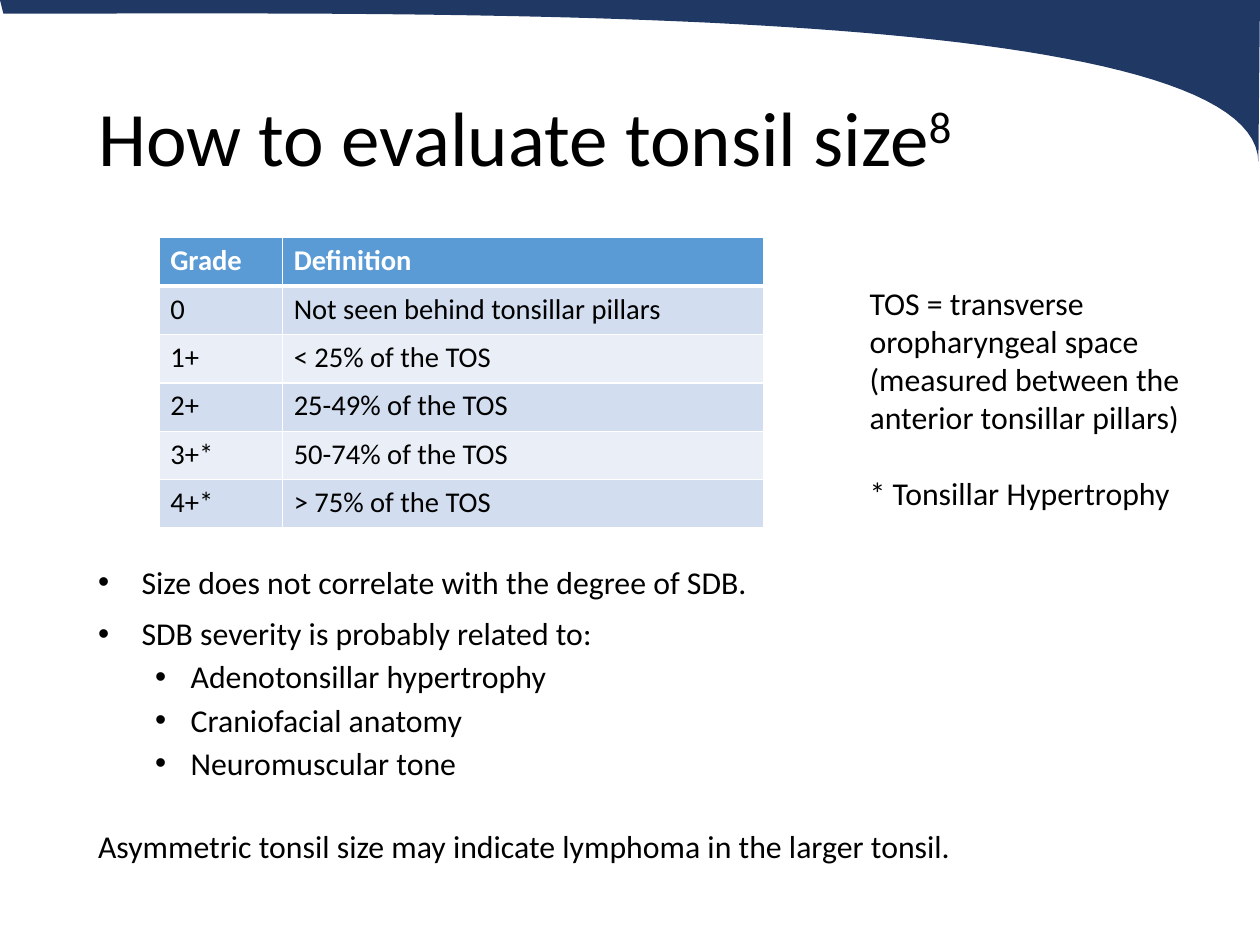
from lxml.etree import SubElement
from pptx import Presentation
from pptx.dml.color import RGBColor
from pptx.enum.text import MSO_ANCHOR, MSO_AUTO_SIZE, PP_ALIGN
from pptx.oxml.ns import qn
from pptx.util import Cm, Inches, Pt

TITLE = ("How to evaluate tonsil size", "8")
GRADES = [
    ("Grade", "Definition"),
    ("0", "Not seen behind tonsillar pillars"),
    ("1+", "< 25% of the TOS"),
    ("2+", "25-49% of the TOS"),
    ("3+*", "50-74% of the TOS"),
    ("4+*", "> 75% of the TOS"),
]
KEY = [
    ("TOS = transverse oropharyngeal space", 0),
    ("(measured between the anterior tonsillar pillars)", 0),
    ("* Tonsillar Hypertrophy", 24),
]
POINTS = [
    (0, "Size does not correlate with the degree of SDB."),
    (0, "SDB severity is probably related to:"),
    (1, "Adenotonsillar hypertrophy"),
    (1, "Craniofacial anatomy"),
    (1, "Neuromuscular tone"),
]
WARNING = "Asymmetric tonsil size may indicate lymphoma in the larger tonsil."

THEME = {
    "font": "Calibri", "title": 48.5, "body": 20, "cell": 18,
    "ink": "000000", "white": "FFFFFF", "navy": "203864",
    "head": "5B9BD5", "bands": ("D2DEEF", "EAEFF7"),
}
LEVELS = [
    {"left": 0.38, "hang": -0.38, "gap": 11},
    {"left": 0.81, "hang": -0.31, "gap": 5.5},
]
WIDE, HIGH = Cm(28), Cm(21)
LEFT = 0.76
CURVE = [(11.01, 1.42), (11, 0), (3.7, 0.12), (0.03, 0.12)]
STEPS = 60


def apply(obj, form):
    for name, value in form.items():
        setattr(obj, name, value)


def style(font, size, ink="ink", bold=False):
    apply(font, {"name": THEME["font"], "size": Pt(size), "bold": bold})
    font.color.rgb = RGBColor.from_string(THEME[ink])


def paint(fill, color):
    fill.solid()
    fill.fore_color.rgb = RGBColor.from_string(color)


def bezier(t):
    parts = ((1 - t) ** 3, 3 * t * (1 - t) ** 2, 3 * t * t * (1 - t), t ** 3)
    return tuple(Inches(sum(w * p[axis] for w, p in zip(parts, CURVE)))
                 for axis in (0, 1))


def add_swoosh(slide):
    pen = slide.shapes.build_freeform(0, 0)
    pen.add_line_segments([(WIDE, 0)] + [bezier(i / STEPS) for i in range(STEPS + 1)])
    shape = pen.convert_to_shape()
    shape.shadow.inherit = False
    paint(shape.fill, THEME["navy"])
    shape.line.fill.background()
    slide.shapes._spTree.insert(2, shape._element)


def add_title(slide):
    title = slide.shapes.title
    apply(title, {"left": Inches(LEFT), "top": Inches(0.44),
                  "width": Inches(9.51), "height": Inches(1.6)})
    apply(title.text_frame, {"auto_size": MSO_AUTO_SIZE.NONE, "word_wrap": True,
                             "vertical_anchor": MSO_ANCHOR.MIDDLE})
    para = title.text_frame.paragraphs[0]
    apply(para, {"alignment": PP_ALIGN.LEFT, "line_spacing": 0.9})
    for text in TITLE:
        run = para.add_run()
        run.text = text
        style(run.font, THEME["title"])
    run._r.get_or_add_rPr().set("baseline", "30000")


def add_box(slide, place, lines):
    frame = slide.shapes.add_textbox(*map(Inches, place)).text_frame
    frame.word_wrap = True
    paras = [frame.paragraphs[0]] + [frame.add_paragraph() for _ in lines[1:]]
    for i, (para, (text, gap)) in enumerate(zip(paras, lines)):
        para.text = text
        if i and gap:
            para.space_before = Pt(gap)
        style(para.runs[0].font, THEME["body"])
    return paras


def add_points(slide):
    lines = [(text, LEVELS[level]["gap"]) for level, text in POINTS]
    paras = add_box(slide, (LEFT, 4.91, 9.51, 2.2), lines)
    for para, (level, text) in zip(paras, POINTS):
        apply(para, {"level": level, "line_spacing": 0.9})
        prop = para._p.get_or_add_pPr()
        prop.set("marL", str(Inches(LEVELS[level]["left"])))
        prop.set("indent", str(Inches(LEVELS[level]["hang"])))
        SubElement(prop, qn("a:buFont"), typeface="Arial")
        SubElement(prop, qn("a:buChar"), char="•")


def edge(cell, side, width):
    line = SubElement(cell._tc.get_or_add_tcPr(), qn("a:ln" + side), w=str(Pt(width)))
    SubElement(SubElement(line, qn("a:solidFill")), qn("a:srgbClr"), val=THEME["white"])


def add_grades(slide):
    place = map(Inches, (1.39, 2.08, 5.29, 2.54))
    table = slide.shapes.add_table(len(GRADES), 2, *place).table
    for col, width in zip(table.columns, (1.08, 4.21)):
        col.width = Inches(width)
    for r, row in enumerate(GRADES):
        head = r == 0
        color = THEME["head"] if head else THEME["bands"][(r - 1) % 2]
        for c, text in enumerate(row):
            cell = table.cell(r, c)
            cell.text = text
            style(cell.text_frame.paragraphs[0].runs[0].font, THEME["cell"],
                  "white" if head else "ink", head)
            for side in "LRTB":
                thick = (head and side == "B") or (r == 1 and side == "T")
                edge(cell, side, 3 if thick else 1)
            paint(cell.fill, color)


def main():
    deck = Presentation()
    deck.slide_width = WIDE
    deck.slide_height = HIGH
    slide = deck.slides.add_slide(deck.slide_layouts[5])
    add_swoosh(slide)
    add_title(slide)
    add_points(slide)
    add_box(slide, (LEFT, 7.18, 8.82, 0.44), [(WARNING, 0)])
    add_box(slide, (7.51, 2.43, 3.26, 2.12), KEY)
    add_grades(slide)
    deck.save("out.pptx")


if __name__ == "__main__":
    main()
